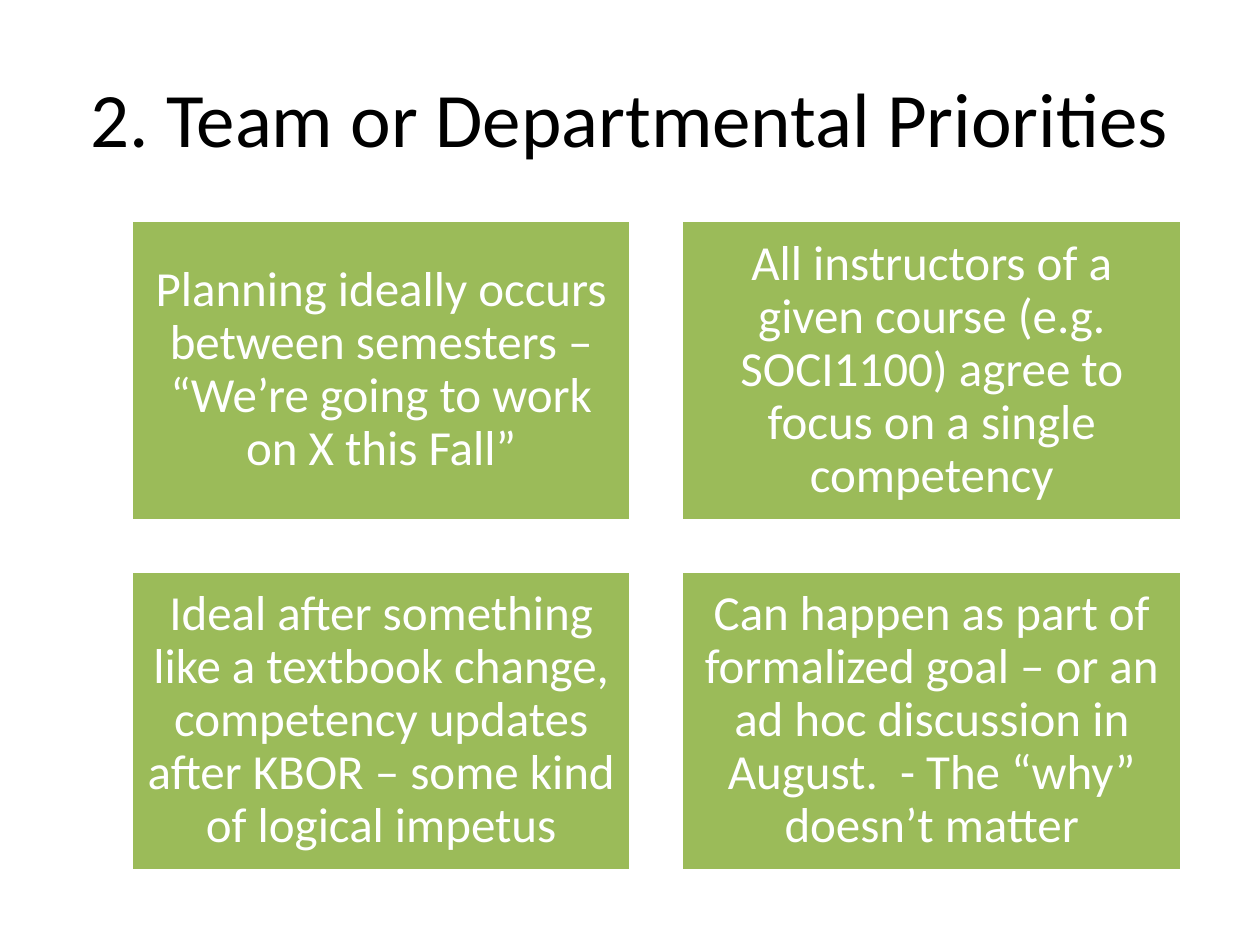
"""Build the slide on team or departmental priorities."""
from dataclasses import dataclass

from pptx import Presentation
from pptx.dml.color import RGBColor
from pptx.enum import shapes, text
from pptx.util import Inches, Pt

TITLE = "2. Team or Departmental Priorities"
PRIORITIES = [
    "Planning ideally occurs between semesters – “We’re going to work on X this Fall”",
    "All instructors of a given course (e.g. SOCI1100) agree to focus on a single competency",
    "Ideal after something like a textbook change, competency updates after KBOR – some kind of logical impetus",
    "Can happen as part of formalized goal – or an ad hoc discussion in August.  - The “why” doesn’t matter",
]


@dataclass(frozen=True)
class Theme:
    font: str = "Calibri"
    title_size: int = 44
    card_size: int = 28
    black: RGBColor = RGBColor(0, 0, 0)
    white: RGBColor = RGBColor(255, 255, 255)
    green: RGBColor = RGBColor(0x9B, 0xBB, 0x59)


THEME = Theme()
COLUMNS = 2
LEFT, TOP, WIDTH, HEIGHT, GAP = 1.04, 1.75, 3.97, 2.38, 0.4
CARD_INSET = 0.12


def write(shape, wording, size, color):
    frame = shape.text_frame
    frame.word_wrap = True
    frame.vertical_anchor = text.MSO_ANCHOR.MIDDLE
    paragraph = frame.paragraphs[0]
    paragraph.text = wording
    paragraph.alignment = text.PP_ALIGN.CENTER
    paragraph.font.name = THEME.font
    paragraph.font.size = Pt(size)
    paragraph.font.color.rgb = color
    return frame


def add_card(slide, index, wording):
    row, column = divmod(index, COLUMNS)
    card = slide.shapes.add_shape(
        shapes.MSO_SHAPE.RECTANGLE,
        Inches(LEFT + column * (WIDTH + GAP)),
        Inches(TOP + row * (HEIGHT + GAP)),
        Inches(WIDTH),
        Inches(HEIGHT),
    )
    card.shadow.inherit = False
    card.fill.solid()
    card.fill.fore_color.rgb = THEME.green
    card.line.color.rgb = THEME.white
    card.line.width = Pt(2)
    frame = write(card, wording, THEME.card_size, THEME.white)
    frame.margin_left = frame.margin_right = Inches(CARD_INSET)
    frame.margin_top = frame.margin_bottom = Inches(CARD_INSET)
    frame.paragraphs[0].line_spacing = 0.9


def main():
    deck = Presentation()
    deck.slide_width, deck.slide_height = Inches(10), Inches(7.5)
    slide = deck.slides.add_slide(deck.slide_layouts[6])
    title = slide.shapes.add_textbox(Inches(0.5), Inches(0.3), Inches(9), Inches(1.25))
    write(title, TITLE, THEME.title_size, THEME.black)
    for index, wording in enumerate(PRIORITIES):
        add_card(slide, index, wording)
    deck.save("out.pptx")


if __name__ == "__main__":
    main()
